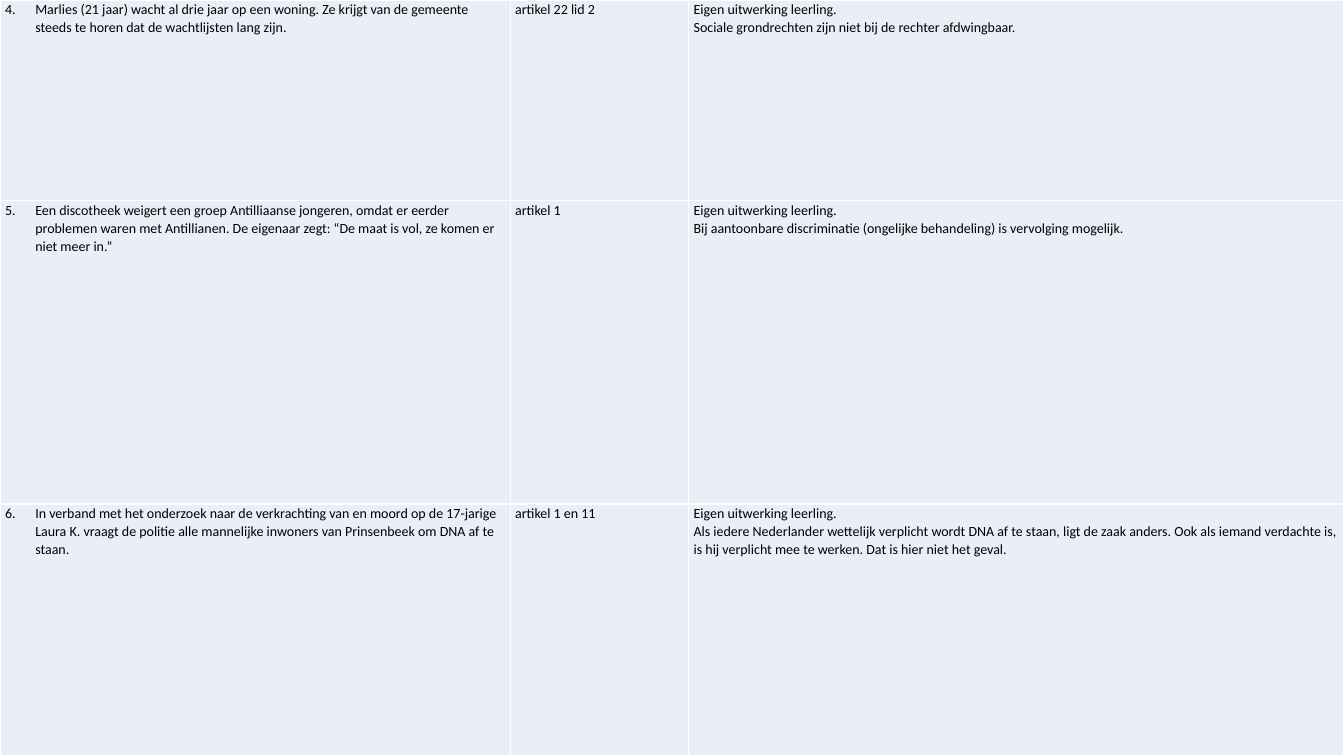
from lxml import etree
from pptx import Presentation
from pptx import util as u
from pptx.dml.color import RGBColor
from pptx.oxml.ns import qn

COLORS = {"text": "000000", "cell": "EAEFF7", "border": "FFFFFF"}
COLUMN_WIDTHS = [5.06, 1.77, 6.5]
ROW_HEIGHTS = [1.99, 3.01, 2.5]
TAB_STOPS = [(0.2, "r"), (0.3, "l"), (0.49, "l"), (0.59, "l")]
OWN_ANSWER = "Eigen uitwerking leerling."
FIRST_NUMBER = 4

# Case, constitutional article, explanation
CASES = [
    ("Marlies (21 jaar) wacht al drie jaar op een woning. Ze krijgt van de "
     "gemeente steeds te horen dat de wachtlijsten lang zijn.",
     "artikel 22 lid 2",
     "Sociale grondrechten zijn niet bij de rechter afdwingbaar."),
    ("Een discotheek weigert een groep Antilliaanse jongeren, omdat er eerder "
     "problemen waren met Antillianen. De eigenaar zegt: “De maat is vol, ze "
     "komen er niet meer in.”",
     "artikel 1",
     "Bij aantoonbare discriminatie (ongelijke behandeling) is vervolging mogelijk."),
    ("In verband met het onderzoek naar de verkrachting van en moord op de "
     "17-jarige Laura K. vraagt de politie alle mannelijke inwoners van "
     "Prinsenbeek om DNA af te staan.",
     "artikel 1 en 11",
     "Als iedere Nederlander wettelijk verplicht wordt DNA af te staan, ligt de "
     "zaak anders. Ook als iemand verdachte is, is hij verplicht mee te werken. "
     "Dat is hier niet het geval."),
]


class SlideBuilder:
    font_name = "Calibri"
    font_size = u.Pt(10)
    line_spacing = u.Pt(13)
    border_width = u.Pt(1)

    def __init__(self, page):
        self.page = page

    def table(self, rows, widths, heights):
        frame = self.page.shapes.add_table(
            len(rows), len(widths), 0, 0,
            u.Inches(sum(widths)), u.Inches(sum(heights)))
        table = frame.table
        table.first_row = False
        table.horz_banding = False
        for column, width in zip(table.columns, widths):
            column.width = u.Inches(width)
        for row, height, contents in zip(table.rows, heights, rows):
            row.height = u.Inches(height)
            for cell, content in zip(row.cells, contents):
                self.cell(cell, content)

    def cell(self, cell, content):
        cell.margin_left = cell.margin_right = u.Inches(0.05)
        cell.margin_top = cell.margin_bottom = 0
        self.borders(cell)
        cell.fill.solid()
        cell.fill.fore_color.rgb = RGBColor.from_string(COLORS["cell"])
        cell.text_frame.text = content
        for paragraph in cell.text_frame.paragraphs:
            if "\t" in paragraph.text:
                self.hanging_number(paragraph)
            paragraph.line_spacing = self.line_spacing
            for span in paragraph.runs:
                span.font.name = self.font_name
                span.font.size = self.font_size
                span.font.color.rgb = RGBColor.from_string(COLORS["text"])

    def borders(self, cell):
        properties = cell._tc.get_or_add_tcPr()
        for side in ("lnL", "lnR", "lnT", "lnB"):
            line = etree.SubElement(properties, qn("a:" + side), w=str(self.border_width))
            fill = etree.SubElement(line, qn("a:solidFill"))
            etree.SubElement(fill, qn("a:srgbClr"), val=COLORS["border"])

    def hanging_number(self, paragraph):
        properties = paragraph._p.get_or_add_pPr()
        properties.set("marL", str(u.Inches(0.3)))
        properties.set("indent", str(u.Inches(-0.3)))
        tabs = etree.SubElement(properties, qn("a:tabLst"))
        for position, align in TAB_STOPS:
            etree.SubElement(tabs, qn("a:tab"), pos=str(u.Inches(position)), algn=align)


def main():
    deck = Presentation()
    deck.slide_width = u.Inches(13.33)
    deck.slide_height = u.Inches(7.5)
    builder = SlideBuilder(deck.slides.add_slide(deck.slide_layouts[6]))

    # Table of numbered cases
    rows = [(f"{number}.\t{case}", article, f"{OWN_ANSWER}\n{explanation}")
            for number, (case, article, explanation) in enumerate(CASES, FIRST_NUMBER)]
    builder.table(rows, COLUMN_WIDTHS, ROW_HEIGHTS)
    deck.save("out.pptx")


if __name__ == "__main__":
    main()
